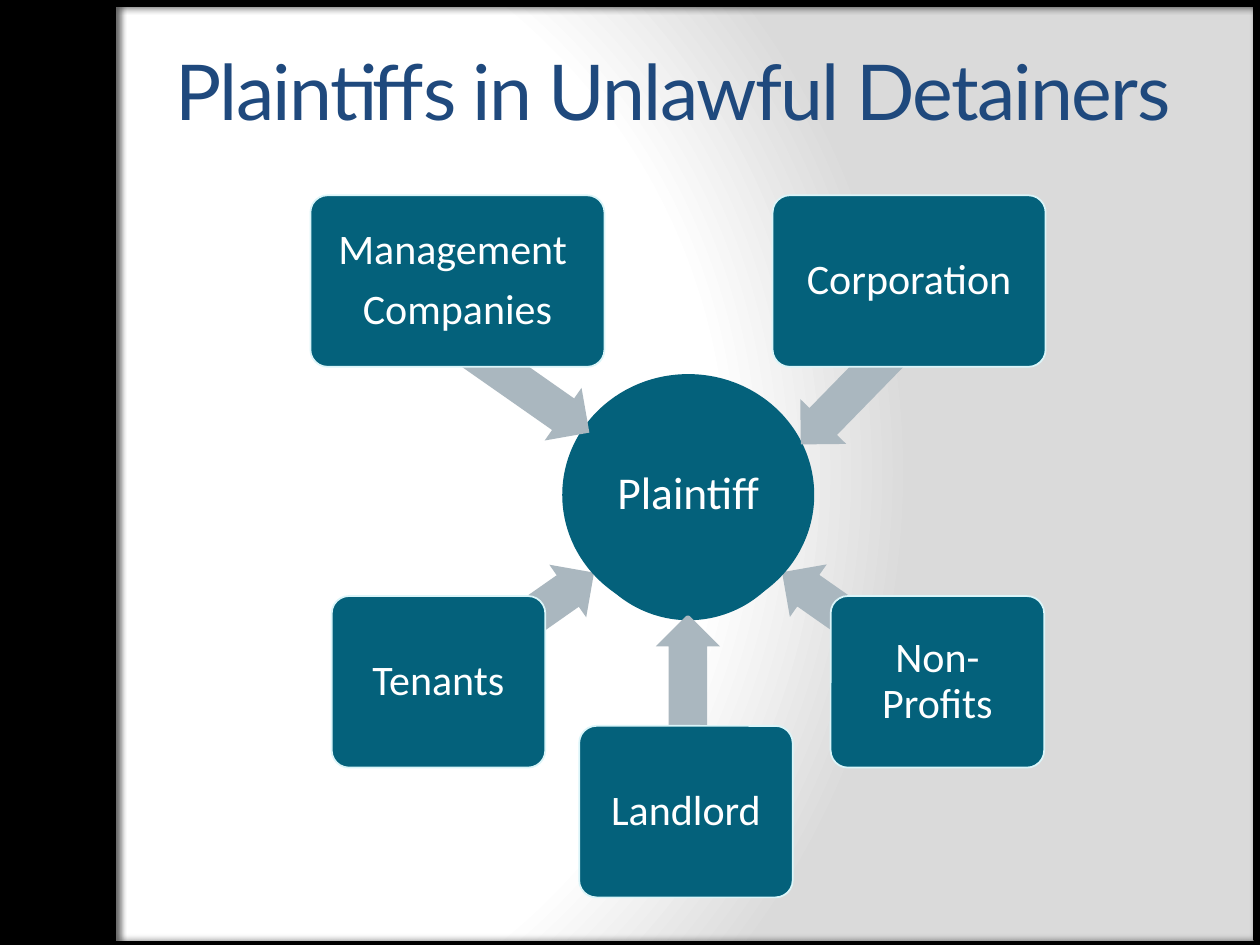
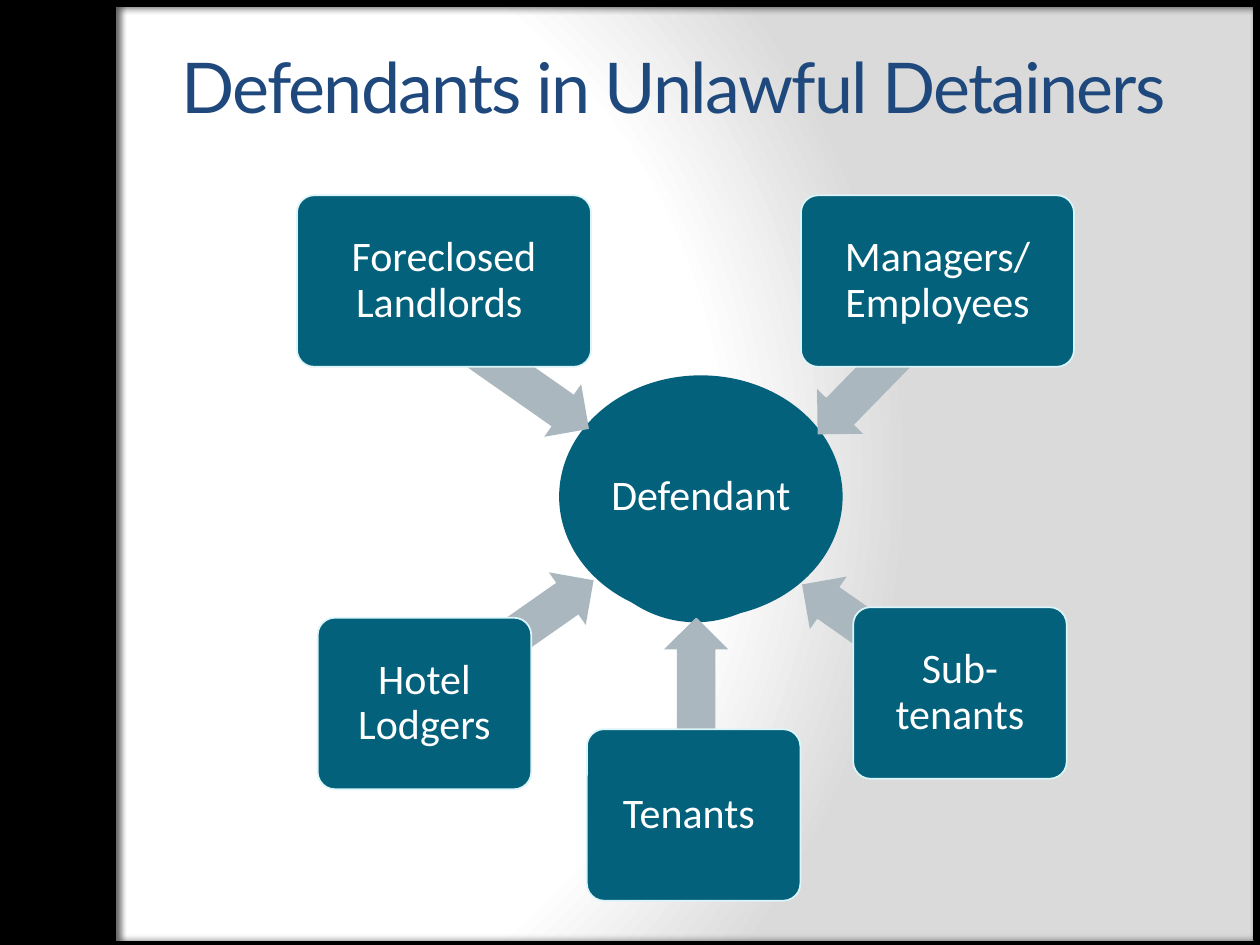
from pptx import Presentation
from pptx.dml.color import RGBColor as RGB
from pptx.enum.shapes import MSO_SHAPE as SHAPE
from pptx.enum.text import MSO_ANCHOR as ANCHOR, PP_ALIGN as ALIGN
from pptx.oxml import parse_xml
from pptx.util import Pt

COLORS = {
    "frame": "000000", "title": "1F497D", "teal": "04617B", "edge": "DBF5F9",
    "arrow": "AAB7BF", "text": "FFFFFF", "bg_in": "FFFFFF", "bg_out": "DADADA",
}
NS = 'xmlns:a="http://schemas.openxmlformats.org/drawingml/2006/main"'
BOX_H, ARROW_H = 98, 36.7
# Width and arrow rotation of each spoke, in drawing order
SPOKES = {
    "lower right": (122, 35), "bottom": (122, 90), "lower left": (122, 145),
    "upper left": (168, 215), "upper right": (156, 314.3),
}
# Left, top, width, height
FRAME = [(0, 0, 66, 541.5), (66, 0, 654, 3.6), (66, 538, 654, 3.6), (716.4, 0, 3.6, 537)]

# Each spoke: text paragraphs, box corner, arrow centre, arrow length
SLIDES = [
    {
        "title": ("Plaintiffs in Unlawful Detainers", 44, (52.6, 21.6, 664, 90)),
        "bubble": (329, 225.4, 129, 129),
        "hub": ("Plaintiff", 26, (321.3, 213.8, 144, 138)),
        "spokes": {
            "lower right": (["Non-Profits"], (474.7, 340.6), (491.4, 358.2), 108.7),
            "bottom": (["Landlord"], (331, 414.8), (393.1, 407.2), 112.3),
            "lower left": (["Tenants"], (189.6, 340.6), (295.2, 358.2), 108),
            "upper left": (["Management ", "Companies"], (177.4, 111.6), (293.8, 217.1), 105),
            "upper right": (["Corporation"], (441.5, 111.6), (493.6, 217.1), 103),
        },
    },
    {
        "title": ("Defendants in Unlawful Detainers", 40, (33, 21.6, 704, 70.6)),
        "bubble": (333, 226, 129, 129.6),
        "hub": ("Defendant", 24, (319.5, 214.5, 162, 138.6)),
        "spokes": {
            "lower right": (["Sub-tenants"], (487.6, 347), (499, 362.5), 99.4),
            "bottom": (["Tenants "], (335.4, 416.7), (397.8, 409.3), 113),
            "lower left": (["Hotel Lodgers"], (181.6, 353), (297, 361.1), 103),
            "upper left": (["Foreclosed Landlords "], (169.7, 111.6), (295.6, 216.4), 100),
            "upper right": (["Managers/ Employees"], (457.7, 111.6), (500.4, 214.2), 95),
        },
    },
]


def set_all(obj, values):
    for name, value in values.items():
        setattr(obj, name, value)


def add_shape(s, kind, place, fill, line=None):
    sp = s.shapes.add_shape(kind, *map(Pt, place))
    sp.shadow.inherit = False
    sp.fill.solid()
    sp.fill.fore_color.rgb = RGB.from_string(COLORS[fill])
    if line:
        sp.line.color.rgb = RGB.from_string(COLORS[line])
        sp.line.width = Pt(1)
    else:
        sp.line.fill.background()
    return sp


def write(sp, paragraphs, size, font, color, inset, anchor, **para):
    tf = sp.text_frame
    set_all(tf, {"word_wrap": True, "vertical_anchor": anchor})
    set_all(tf, {f"margin_{side}": Pt(pad) for side, pad in zip(("left", "top", "right", "bottom"), inset)})
    for i, text in enumerate(paragraphs):
        p = tf.paragraphs[0] if i == 0 else tf.add_paragraph()
        set_all(p, {"alignment": ALIGN.CENTER, **para})
        r = p.add_run()
        r.text = text
        set_all(r.font, {"size": Pt(size), "name": font})
        r.font.color.rgb = RGB.from_string(COLORS[color])


def write_label(sp, paragraphs, size, pad):
    write(sp, paragraphs, size, "Calibri", "text", [pad] * 4, ANCHOR.MIDDLE,
          line_spacing=0.9, space_after=Pt(0.35 * size))


def add_background(s):
    s.background.fill.solid()
    old = s.element.xpath(".//p:bgPr/a:solidFill")[0]
    stops = "".join(
        f'<a:gs pos="{pos}"><a:srgbClr val="{COLORS[name]}"/></a:gs>'
        for pos, name in ((0, "bg_in"), (75000, "bg_in"), (100000, "bg_out")))
    old.getparent().replace(old, parse_xml(
        f'<a:gradFill {NS} rotWithShape="1"><a:gsLst>{stops}</a:gsLst><a:path path="circle">'
        '<a:fillToRect l="20000" t="50000" r="100000" b="50000"/></a:path></a:gradFill>'))


def add_frame(s):
    for place in FRAME:
        sp = add_shape(s, SHAPE.RECTANGLE, place, "frame", "frame")
        effects = sp.element.xpath(".//a:effectLst")[0]
        effects.append(parse_xml(
            f'<a:outerShdw {NS} blurRad="{Pt(4)}" dist="{Pt(2)}" dir="0" rotWithShape="0">'
            f'<a:srgbClr val="{COLORS["frame"]}"><a:alpha val="60000"/></a:srgbClr></a:outerShdw>'))


def add_title(s, text, size, place):
    sp = s.shapes.add_textbox(*map(Pt, place))
    write(sp, [text], size, "Lato", "title", (7.2, 3.6, 7.2, 3.6), ANCHOR.TOP)
    sp.element.xpath(".//a:rPr")[0].set("spc", "-100")


def add_hub(s, text, size, place):
    write_label(add_shape(s, SHAPE.OVAL, place, "teal"), [text], size, 0)


def add_spoke(s, position, paragraphs, corner, center, length):
    width, rotation = SPOKES[position]
    x, y = center
    arrow = add_shape(s, SHAPE.LEFT_ARROW, (x - length / 2, y - ARROW_H / 2, length, ARROW_H), "arrow")
    arrow.adjustments[0], arrow.adjustments[1] = 0.6, 0.5
    arrow.rotation = rotation
    box = add_shape(s, SHAPE.ROUNDED_RECTANGLE, (*corner, width, BOX_H), "teal", "edge")
    box.adjustments[0] = 0.1
    write_label(box, paragraphs, 24, 6.5)


def main():
    prs = Presentation()
    prs.slide_width, prs.slide_height = Pt(720), Pt(540)
    for content in SLIDES:
        s = prs.slides.add_slide(prs.slide_layouts[6])
        add_background(s)
        add_frame(s)
        add_title(s, *content["title"])
        # Wheel: the hub covers the lower arrows, the upper arrows cover the hub
        add_shape(s, SHAPE.OVAL, content["bubble"], "teal")
        for position in SPOKES:
            if position == "upper left":
                add_hub(s, *content["hub"])
            add_spoke(s, position, *content["spokes"][position])
    prs.save("out.pptx")


if __name__ == "__main__":
    main()
